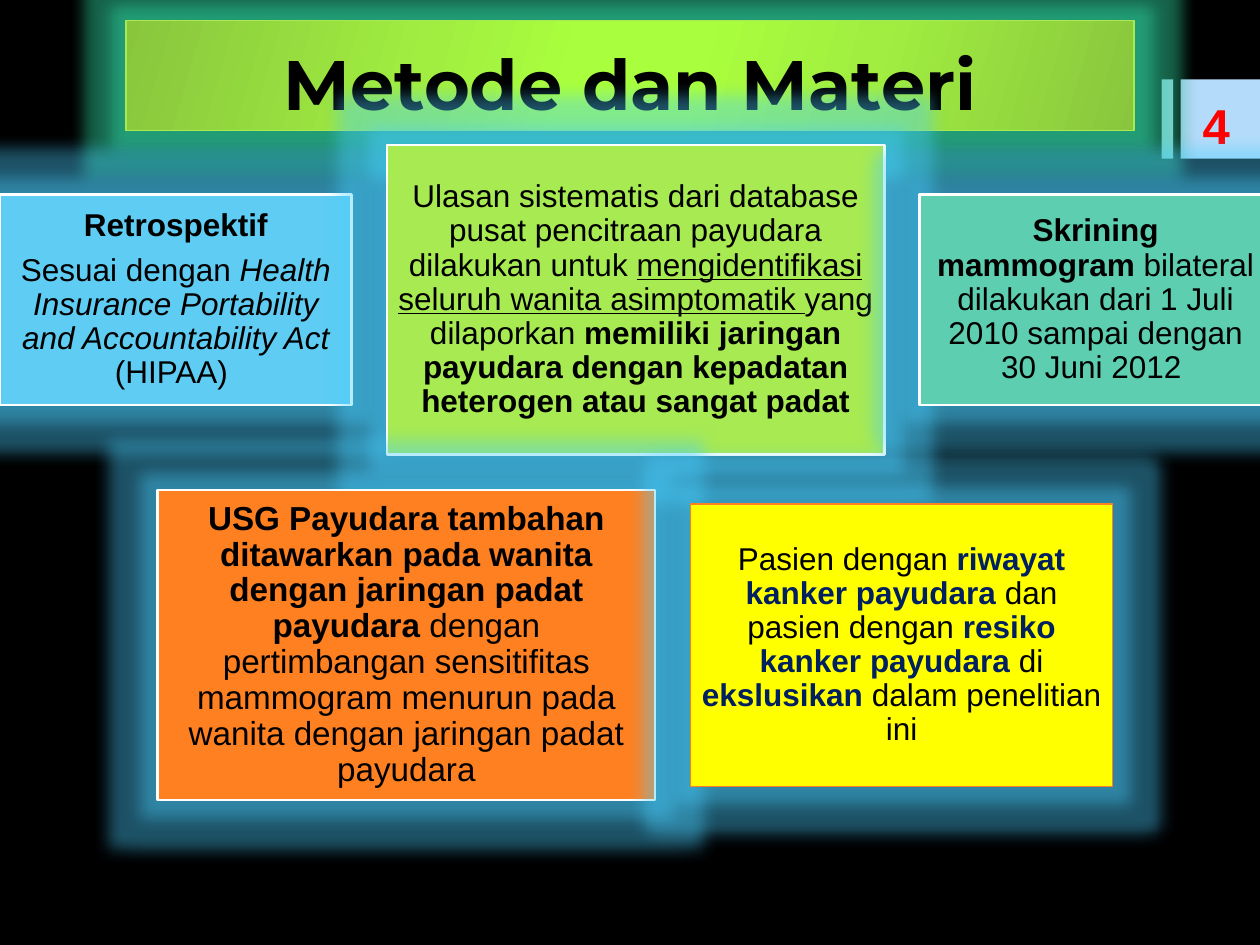
from dataclasses import dataclass
from typing import NamedTuple

from lxml import etree
from pptx import Presentation
from pptx.dml.color import RGBColor
from pptx.enum.shapes import MSO_SHAPE
from pptx.enum.text import MSO_ANCHOR, PP_ALIGN
from pptx.oxml.ns import qn
from pptx.util import Inches, Pt

RECTANGLE = MSO_SHAPE.RECTANGLE
MIDDLE, BOTTOM = MSO_ANCHOR.MIDDLE, MSO_ANCHOR.BOTTOM
CENTER, RIGHT = PP_ALIGN.CENTER, PP_ALIGN.RIGHT

SLIDE_WIDTH, SLIDE_HEIGHT = Inches(10), Inches(7.5)
COLUMN, ROW = SLIDE_WIDTH / 100, SLIDE_HEIGHT / 75
CARD_GAP = 2.8  # columns
WIDE_INSET = 1  # columns


@dataclass(frozen=True)
class Theme:
    background: str = "000000"
    ink: str = "000000"
    emphasis: str = "002060"
    page: str = "FF0000"
    tab: str = "B4DCFA"
    border: str = "FFFFFF"
    lime: str = "A7EA52"
    sky: str = "5ECCF3"
    mint: str = "5DCEAF"
    orange: str = "FF8021"
    yellow: str = "FFFF00"
    card_glow: str = "49CFFF"
    title_glow: str = "36F5B8"
    title_stops: tuple = ((0, "89C63D"), (30, "A1EE40"), (45, "A9FF3D"),
                          (55, "A9FF3D"), (73, "A1EE40"), (100, "89C63D"))
    title_font: str = "Montserrat"
    body_font: str = "Arial"
    title_size: float = 40
    page_size: float = 28
    body_size: float = 18
    large_body_size: float = 19


THEME = Theme()


class Box(NamedTuple):
    """Left and width in columns, top and height in rows."""
    left: float
    top: float
    width: float
    height: float

    def emu(self) -> tuple:
        return (round(self.left * COLUMN), round(self.top * ROW),
                round(self.width * COLUMN), round(self.height * ROW))


class Span(NamedTuple):
    text: str
    bold: bool = False
    italic: bool = False
    underline: bool = False
    color: str = THEME.ink


@dataclass(frozen=True)
class Card:
    width: float
    height: float
    fill: str
    paragraphs: tuple
    border: str = THEME.border
    border_width: float = 1.5
    size: float = THEME.body_size
    inset: float = 0.7


class CardRow(NamedTuple):
    left: float
    middle: float
    cards: tuple


def key(text: str) -> Span:
    return Span(text, bold=True, color=THEME.emphasis)


CARD_ROWS = (
    CardRow(0, 23.8, (
        Card(27.9, 16.7, THEME.sky, (
            (Span("Retrospektif", bold=True),),
            (Span("Sesuai dengan "),
             Span("Health Insurance Portability and Accountability Act ", italic=True),
             Span("(HIPAA) ")))),
        Card(39.5, 24.6, THEME.lime, ((
            Span("Ulasan sistematis dari database pusat pencitraan payudara dilakukan untuk "),
            Span("mengidentifikasi seluruh wanita asimptomatik ", underline=True),
            Span("yang dilaporkan "),
            Span("memiliki jaringan payudara dengan kepadatan heterogen atau sangat padat",
                 bold=True)),)),
        Card(27.9, 16.7, THEME.mint, ((
            Span("Skrining mammogram ", bold=True),
            Span("bilateral dilakukan dari 1 Juli 2010 sampai dengan 30 Juni 2012 ")),),
            inset=WIDE_INSET),
    )),
    CardRow(12.5, 51.2, (
        Card(39.5, 24.6, THEME.orange, ((
            Span("USG Payudara tambahan ditawarkan pada wanita dengan jaringan padat payudara ",
                 bold=True),
            Span("dengan pertimbangan sensitifitas mammogram menurun pada wanita "
                 "dengan jaringan padat payudara")),),
            size=THEME.large_body_size, inset=WIDE_INSET),
        Card(33.5, 22.4, THEME.yellow, ((
            Span("Pasien dengan "), key("riwayat kanker payudara "),
            Span("dan pasien dengan "), key("resiko kanker payudara "),
            Span("di "), key("ekslusikan "), Span("dalam penelitian ini")),),
            border=THEME.orange, border_width=0.75),
    )),
)


def rgb(color: str) -> RGBColor:
    return RGBColor.from_string(color)


def add_color(parent, color: str, alpha: int = 100) -> None:
    node = etree.SubElement(parent, qn("a:srgbClr"), val=color)
    if alpha < 100:
        etree.SubElement(node, qn("a:alpha"), val=str(alpha * 1000))


def write(shape, paragraphs, *, size: float, font: str = THEME.body_font,
          align=CENTER, anchor=MIDDLE, inset: float | None = None,
          line_spacing: float = 1, space_after: float = 0) -> None:
    frame = shape.text_frame
    frame.word_wrap = True
    frame.vertical_anchor = anchor
    if inset is not None:
        frame.margin_left = frame.margin_right = round(inset * COLUMN)
        frame.margin_top = frame.margin_bottom = round(inset * ROW)
    for index, spans in enumerate(paragraphs):
        paragraph = frame.add_paragraph() if index else frame.paragraphs[0]
        paragraph.alignment = align
        paragraph.line_spacing = line_spacing
        paragraph.space_after = Pt(space_after)
        for span in spans:
            run = paragraph.add_run()
            run.text = span.text
            run.font.name, run.font.size = font, Pt(size)
            run.font.bold, run.font.italic = span.bold, span.italic
            run.font.underline = span.underline
            run.font.color.rgb = rgb(span.color)


def add_rectangle(slide, box: Box, fill: str, border: str | None = None,
                  border_width: float = 0.75):
    shape = slide.shapes.add_shape(RECTANGLE, *box.emu())
    shape.shadow.inherit = False
    shape.fill.solid()
    shape.fill.fore_color.rgb = rgb(fill)
    if border:
        shape.line.color.rgb = rgb(border)
        shape.line.width = Pt(border_width)
    else:
        shape.line.fill.background()
    return shape


def add_glow(shape, color: str):
    """Adds a soft halo and returns the list of effects."""
    effects = shape._element.spPr.find(qn("a:effectLst"))
    glow = etree.SubElement(effects, qn("a:glow"), rad=str(Pt(18)))
    add_color(glow, color, 40)
    return effects


def add_title(slide) -> None:
    banner = add_rectangle(slide, Box(10, 1.65, 80, 8.7), THEME.lime, THEME.lime)
    banner.fill.gradient()
    banner.fill.gradient_angle = 344
    stops = banner._element.spPr.find(qn("a:gradFill")).find(qn("a:gsLst"))
    stops[:] = []
    for position, color in THEME.title_stops:
        add_color(etree.SubElement(stops, qn("a:gs"), pos=str(position * 1000)), color)
    shadow = etree.SubElement(add_glow(banner, THEME.title_glow), qn("a:outerShdw"),
                              blurRad=str(Pt(4)), dist=str(Pt(3.3)),
                              dir=str(90 * 60000), rotWithShape="0")
    add_color(shadow, "000000", 40)
    write(banner, ((Span("Metode dan Materi", bold=True),),), size=THEME.title_size,
          font=THEME.title_font, anchor=BOTTOM)


def add_page_tab(slide) -> None:
    for left, width in ((92.2, 0.9), (93.7, 6.3)):
        add_rectangle(slide, Box(left, 6.3, width, 6.3), THEME.tab)
    number = slide.shapes.add_textbox(*Box(88.3, 8.3, 10.3, 3.3).emu())
    write(number, ((Span("4", bold=True, color=THEME.page),),),
          size=THEME.page_size, align=RIGHT)


def add_card_row(slide, row: CardRow) -> None:
    left = row.left
    for card in row.cards:
        box = Box(left, row.middle - card.height / 2, card.width, card.height)
        shape = add_rectangle(slide, box, card.fill, card.border, card.border_width)
        add_glow(shape, THEME.card_glow)
        write(shape, card.paragraphs, size=card.size, inset=card.inset,
              line_spacing=0.9, space_after=0.35 * card.size)
        left += card.width + CARD_GAP


def main() -> None:
    deck = Presentation()
    deck.slide_width, deck.slide_height = SLIDE_WIDTH, SLIDE_HEIGHT
    slide = deck.slides.add_slide(deck.slide_layouts[6])
    slide.background.fill.solid()
    slide.background.fill.fore_color.rgb = rgb(THEME.background)
    add_page_tab(slide)
    add_title(slide)
    for row in CARD_ROWS:
        add_card_row(slide, row)
    deck.save("out.pptx")


if __name__ == "__main__":
    main()
